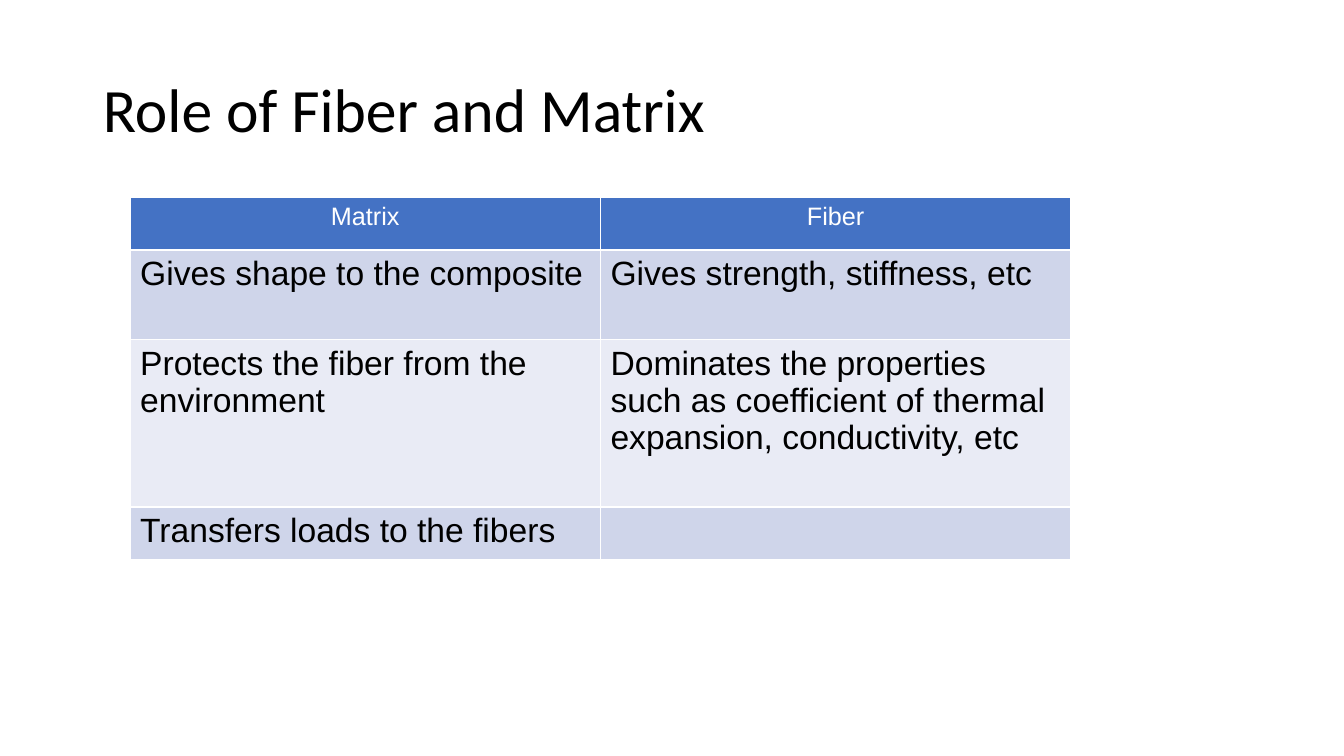
from lxml import etree
from pptx import Presentation
from pptx import util as u
from pptx.dml.color import RGBColor
from pptx.enum import text
from pptx.oxml import ns

HUES = {"ink": "000000", "paper": "FFFFFF", "head": "4472C4",
        "dark": "CFD5EA", "light": "E9EBF5"}
WIDE, HIGH = u.Inches(13.33), u.Inches(7.5)
ROLES = [
    ("Matrix", "Fiber"),
    ("Gives shape to the composite", "Gives strength, stiffness, etc"),
    ("Protects the fiber from the environment",
     "Dominates the properties such as coefficient of thermal expansion, "
     "conductivity, etc"),
    ("Transfers loads to the fibers", ""),
]
ROWS = [0.52, 0.89, 1.66, 0.52]


def hue(name):
    """Return the named colour."""
    return RGBColor.from_string(HUES[name])


def write(frame, words, font="Arial", size=24, color="ink", align="LEFT",
          space=1.0):
    """Put one formatted paragraph in a text frame."""
    para = frame.paragraphs[0]
    para.alignment = getattr(text.PP_ALIGN, align)
    para.line_spacing = space
    if words:
        run = para.add_run()
        run.text = words
        style = run.font
    else:
        style = para.font
    style.name, style.size, style.bold = font, u.Pt(size), False
    style.color.rgb = hue(color)


def edge(cell, side, width=1):
    """Draw one white border of a cell."""
    line = etree.SubElement(cell._tc.get_or_add_tcPr(), ns.qn(f"a:ln{side}"),
                            w=str(u.Pt(width)))
    fill = etree.SubElement(line, ns.qn("a:solidFill"))
    etree.SubElement(fill, ns.qn("a:srgbClr"), val=HUES["paper"])


def title(slide, words):
    """Place and fill the title placeholder."""
    box = slide.shapes.title
    box.left, box.top = int(WIDE * 0.069), int(HIGH * 0.053)
    box.width, box.height = int(WIDE * 0.863), int(HIGH * 0.193)
    box.text_frame.vertical_anchor = text.MSO_ANCHOR.MIDDLE
    write(box.text_frame, words, font="Calibri", size=44, space=0.9)


def grid(slide, data, rows):
    """Add the banded table with its heading row."""
    frame = slide.shapes.add_table(
        len(data), len(data[0]), u.Inches(1.29), u.Inches(1.96),
        int(WIDE * 0.7), u.Inches(sum(rows)))
    table = frame.table
    for r, line in enumerate(data):
        table.rows[r].height = u.Inches(rows[r])
        head = r == 0
        band = "head" if head else "dark" if r % 2 else "light"
        for c, words in enumerate(line):
            cell = table.cell(r, c)
            for side in "LRTB":
                edge(cell, side)
            cell.fill.solid()
            cell.fill.fore_color.rgb = hue(band)
            form = dict(size=18, color="paper", align="CENTER") if head else {}
            write(cell.text_frame, words, **form)


def main():
    """Build and save the slide."""
    deck = Presentation()
    deck.slide_width, deck.slide_height = WIDE, HIGH
    slide = deck.slides.add_slide(deck.slide_layouts[5])
    title(slide, "Role of Fiber and Matrix")
    grid(slide, ROLES, ROWS)
    deck.save("out.pptx")


if __name__ == "__main__":
    main()
